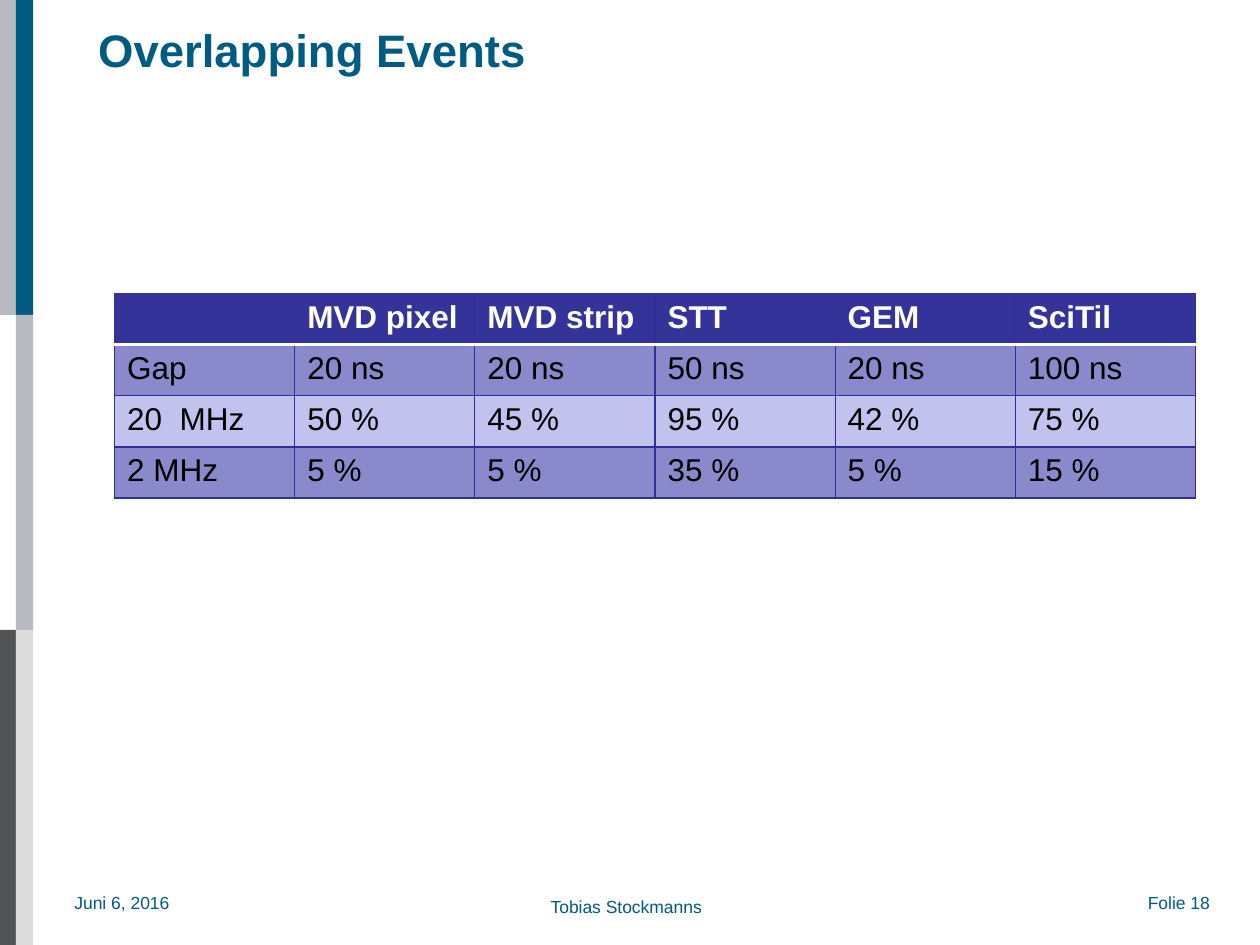
"""Build the slide on overlapping detector events."""
import pptx
import pptx.dml.color
import pptx.enum.text
import pptx.enum.shapes
import pptx.oxml
import pptx.oxml.ns
import pptx.util

Cm = pptx.util.Cm
BLUE, GREY, EDGE = "005B82", "B9BBC0", "2F2F98"


def paint(colour_format, colour):
    colour_format.rgb = pptx.dml.color.RGBColor.from_string(colour)


def write(frame, wording, size, colour, bold=False):
    run = frame.paragraphs[0].add_run()
    run.text = wording
    run.font.name = "Arial"
    run.font.size = pptx.util.Pt(size)
    run.font.bold = bold
    paint(run.font.color, colour)


deck = pptx.Presentation()
deck.slide_width, deck.slide_height = Cm(25.4), Cm(19.05)
slide = deck.slides.add_slide(deck.slide_layouts[6])

stripe_height = 6.35
for left, band, colour in [
    (0, 0, GREY),
    (0, 2, "515355"),
    (0.32, 0, BLUE),
    (0.32, 1, GREY),
    (0.32, 2, "DCDCDC"),
]:
    stripe = slide.shapes.add_shape(
        pptx.enum.shapes.MSO_SHAPE.RECTANGLE,
        Cm(left), Cm(band * stripe_height), Cm(0.35), Cm(stripe_height))
    stripe.shadow.inherit = False
    stripe.fill.solid()
    paint(stripe.fill.fore_color, colour)
    stripe.line.fill.background()

for wording, left, top, width, height, size in [
    ("Juni 6, 2016", 1.5, 17.98, 2.16, 0.43, 10),
    ("Folie 18", 23.14, 17.98, 1.57, 0.43, 10),
    ("Tobias Stockmanns", 11.1, 18.06, 3.2, 0.43, 10),
    ("Overlapping Events", 1.98, 0.2, 18.47, 1.57, 26),
]:
    is_title = size == 26
    frame = slide.shapes.add_textbox(Cm(left), Cm(top), Cm(width), Cm(height)).text_frame
    frame.margin_left = frame.margin_right = frame.margin_top = frame.margin_bottom = 0
    frame.word_wrap = is_title
    if is_title:
        frame.vertical_anchor = pptx.enum.text.MSO_ANCHOR.MIDDLE
    write(frame, wording, size, BLUE, is_title)

overlaps = [
    ["", "MVD pixel", "MVD strip", "STT", "GEM", "SciTil"],
    ["Gap", "20 ns", "20 ns", "50 ns", "20 ns", "100 ns"],
    ["20  MHz", "50 %", "45 %", "95 %", "42 %", "75 %"],
    ["2 MHz", "5 %", "5 %", "35 %", "5 %", "15 %"],
]
row_fills = ["333399", "8989CC", "C2C2EE", "8989CC"]
grid = slide.shapes.add_table(
    len(overlaps), len(overlaps[0]), Cm(2.31), Cm(5.92), Cm(21.79), Cm(4.12)).table
grid.horz_banding = False

for row_index, entries in enumerate(overlaps):
    for column_index, entry in enumerate(entries):
        cell = grid.cell(row_index, column_index)
        for side in "LRTB":
            under_header = (row_index, side) in [(0, "B"), (1, "T")]
            colour, points = ("FFFFFF", 2) if under_header else (EDGE, 0.75)
            cell._tc.get_or_add_tcPr().append(pptx.oxml.parse_xml(
                f'<a:ln{side} {pptx.oxml.ns.nsdecls("a")} w="{pptx.util.Pt(points)}">'
                f'<a:solidFill><a:srgbClr val="{colour}"/></a:solidFill></a:ln{side}>'))
        cell.fill.solid()
        paint(cell.fill.fore_color, row_fills[row_index])
        if entry:
            is_header = row_index == 0
            write(cell.text_frame, entry, 18, "FFFFFF" if is_header else "000000", is_header)

deck.save("out.pptx")
